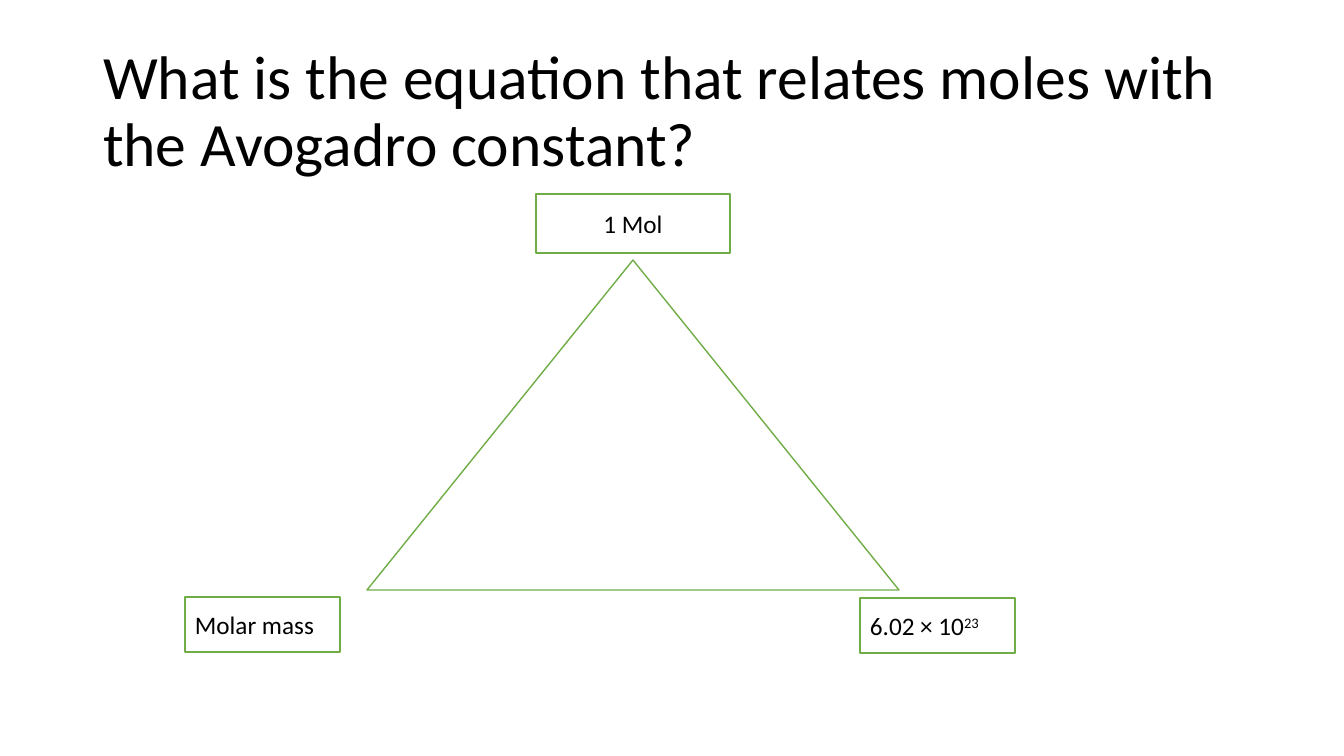
"""Build a slide with a triangle relating moles, molar mass and the Avogadro constant."""
import pptx
import pptx.dml.color
import pptx.enum.shapes
import pptx.enum.text
import pptx.util

PX = 914400 / 100.8
THEME = {
    "font": "Calibri",
    "ink": pptx.dml.color.RGBColor.from_string("000000"),
    "paper": pptx.dml.color.RGBColor.from_string("FFFFFF"),
    "outline": pptx.dml.color.RGBColor.from_string("70AD47"),
    "outline_width": pptx.util.Pt(1),
    "title_size": pptx.util.Pt(44),
    "label_size": pptx.util.Pt(18),
}
SHAPE = pptx.enum.shapes.MSO_SHAPE
ALIGN = pptx.enum.text.PP_ALIGN
MIDDLE = pptx.enum.text.MSO_ANCHOR.MIDDLE


def add_outlined(slide, preset, box):
    outlined = slide.shapes.add_shape(preset, *[round(v * PX) for v in box])
    outlined.shadow.inherit = False
    outlined.fill.solid()
    outlined.fill.fore_color.rgb = THEME["paper"]
    outlined.line.color.rgb = THEME["outline"]
    outlined.line.width = THEME["outline_width"]
    return outlined


def add_run(paragraph, text, size):
    run = paragraph.add_run()
    run.text = text
    run.font.name = THEME["font"]
    run.font.size = size
    run.font.color.rgb = THEME["ink"]
    return run


deck = pptx.Presentation()
deck.slide_width = round(1344 * PX)
deck.slide_height = round(756 * PX)
slide = deck.slides.add_slide(deck.slide_layouts[5])

question = slide.shapes.title
question.left, question.top, question.width, question.height = [
    round(v * PX) for v in (93, 40, 1159, 146)]
question.text_frame.auto_size = pptx.enum.text.MSO_AUTO_SIZE.NONE
question.text_frame.vertical_anchor = MIDDLE
question_line = question.text_frame.paragraphs[0]
question_line.alignment = ALIGN.LEFT
question_line.line_spacing = 0.9
add_run(question_line, "What is the equation that relates moles with the Avogadro constant?",
        THEME["title_size"])

add_outlined(slide, SHAPE.ISOSCELES_TRIANGLE, (367, 260, 532, 330))

corners = [
    ((536, 194, 194, 59), ALIGN.CENTER, "1 Mol", ""),
    ((860, 598, 155, 55), ALIGN.LEFT, "6.02 × 10", "23"),
    ((185, 597, 155, 55), ALIGN.LEFT, "Molar mass", ""),
]
for box, alignment, label, exponent in corners:
    corner = add_outlined(slide, SHAPE.RECTANGLE, box)
    corner.text_frame.word_wrap = True
    corner.text_frame.vertical_anchor = MIDDLE
    label_line = corner.text_frame.paragraphs[0]
    label_line.alignment = alignment
    add_run(label_line, label, THEME["label_size"])
    if exponent:
        power = add_run(label_line, exponent, THEME["label_size"])
        power.font._element.set("baseline", "30000")

deck.save("out.pptx")
